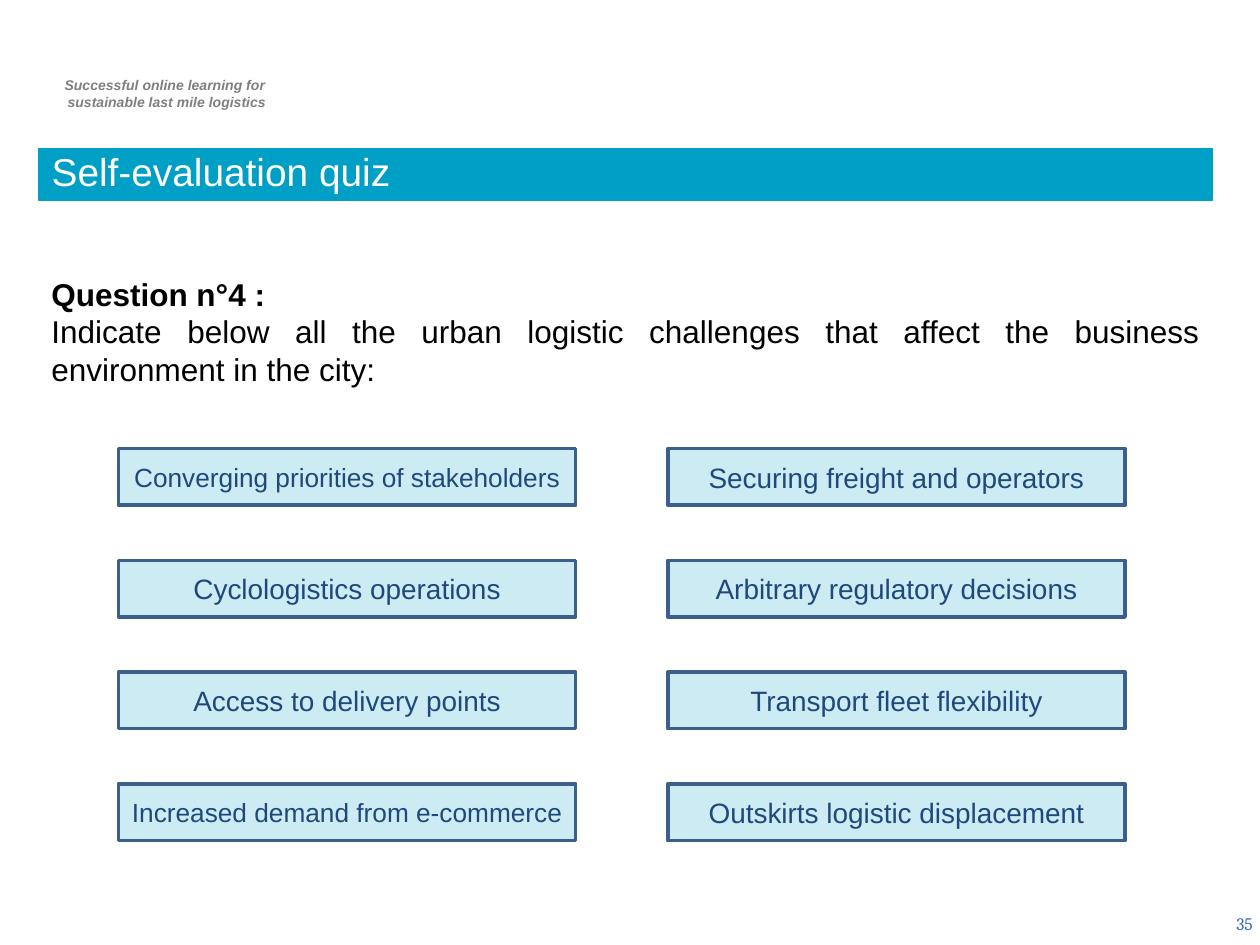
from lxml import etree
from pptx import Presentation
from pptx.dml.color import RGBColor
from pptx.enum.shapes import MSO_SHAPE
from pptx.enum.text import MSO_ANCHOR, MSO_AUTO_SIZE, PP_ALIGN
from pptx.oxml.ns import qn
from pptx.util import Inches, Pt

RECTANGLE = MSO_SHAPE.RECTANGLE
MIDDLE, BOTTOM = MSO_ANCHOR.MIDDLE, MSO_ANCHOR.BOTTOM
LEFT, CENTER, RIGHT, JUSTIFY = (
    PP_ALIGN.LEFT, PP_ALIGN.CENTER, PP_ALIGN.RIGHT, PP_ALIGN.JUSTIFY)

TEAL = RGBColor(0x00, 0x9F, 0xC6)
BORDER = RGBColor(0x3A, 0x5F, 0x8C)
NAVY = RGBColor(0x1F, 0x49, 0x7D)
BLUE = RGBColor(0x33, 0x66, 0xCC)
GRAY = RGBColor(0x7F, 0x7F, 0x7F)
BLACK = RGBColor(0x00, 0x00, 0x00)
WHITE = RGBColor(0xFF, 0xFF, 0xFF)

COURSE = ["Successful online learning for ", "sustainable last mile logistics"]
TITLE = "Self-evaluation quiz"
QUESTION = "Question n°4 :"
INSTRUCTION = ("Indicate below all the urban logistic challenges that affect "
               "the business environment in the city:")
PAGE_NUMBER = "35"
# One tuple per row of the grid: (text, size in points) for each column
ANSWERS = [
    (("Converging priorities of stakeholders", 15),
     ("Securing freight and operators", 16)),
    (("Cyclologistics operations", 16), ("Arbitrary regulatory decisions", 16)),
    (("Access to delivery points", 16), ("Transport fleet flexibility", 16)),
    (("Increased demand from e-commerce", 15),
     ("Outskirts logistic displacement", 16)),
]

MARGIN, CONTENT_WIDTH = 0.31, 9.31
GRID_LEFT, GRID_TOP = 0.94, 3.56
COLUMN_STEP, ROW_STEP = 4.36, 0.887
ANSWER_WIDTH, ANSWER_HEIGHT = 3.63, 0.45


def style(para, size, color, align=LEFT, bold=False, italic=False, name="Arial"):
    para.alignment = align
    for span in para.runs:
        font = span.font
        font.name, font.size, font.color.rgb = name, Pt(size), color
        font.bold, font.italic = bold, italic


def add_text(page, lines, left, top, width, height):
    box = page.shapes.add_textbox(*map(Inches, (left, top, width, height)))
    frame = box.text_frame
    frame.word_wrap = True
    frame.text = "\n".join(lines)
    return frame


def add_answer(page, text, size, left, top):
    box = page.shapes.add_shape(
        RECTANGLE, *map(Inches, (left, top, ANSWER_WIDTH, ANSWER_HEIGHT)))
    box.shadow.inherit = False
    box.fill.solid()
    box.fill.fore_color.rgb = TEAL
    color = box.fill._xPr.find(qn("a:solidFill"))[0]
    etree.SubElement(color, qn("a:alpha"), val="20000")
    box.line.color.rgb = BORDER
    box.line.width = Pt(2)
    frame = box.text_frame
    frame.vertical_anchor = MIDDLE
    frame.text = text
    style(frame.paragraphs[0], size, NAVY, CENTER)


def add_title(page):
    title = page.shapes.title
    title.left, title.top, title.width, title.height = map(
        Inches, (MARGIN, 1.18, CONTENT_WIDTH, 0.41))
    title.fill.solid()
    title.fill.fore_color.rgb = TEAL
    title.line.color.rgb = TEAL
    title.line.width = Pt(0.75)
    frame = title.text_frame
    frame.text = TITLE
    frame.auto_size = MSO_AUTO_SIZE.NONE
    frame.vertical_anchor = BOTTOM
    para = frame.paragraphs[0]
    para.line_spacing = 0.8
    style(para, 22.2, WHITE)


def main():
    deck = Presentation()
    deck.slide_width, deck.slide_height = Inches(10), Inches(7.5)
    page = deck.slides.add_slide(deck.slide_layouts[5])

    header = add_text(page, COURSE, 0.29, 0.56, 2.03, 0.37)
    for para in header.paragraphs:
        para._p.get_or_add_pPr().set("marL", str(Inches(0.04)))
        style(para, 8, GRAY, CENTER, bold=True, italic=True)

    add_title(page)

    question = add_text(page, [QUESTION, INSTRUCTION],
                        MARGIN, 2.13, CONTENT_WIDTH, 1.01)
    heading, instruction = question.paragraphs
    style(heading, 18, BLACK, bold=True)
    style(instruction, 18, BLACK, JUSTIFY)

    for row, answers in enumerate(ANSWERS):
        for column, (text, size) in enumerate(answers):
            add_answer(page, text, size, GRID_LEFT + column * COLUMN_STEP,
                       GRID_TOP + row * ROW_STEP)

    number = add_text(page, [PAGE_NUMBER], 7.71, 7.13, 2.33, 0.4)
    number.vertical_anchor = MIDDLE
    style(number.paragraphs[0], 10, BLUE, RIGHT, name="Cambria")

    deck.save("out.pptx")


if __name__ == "__main__":
    main()
